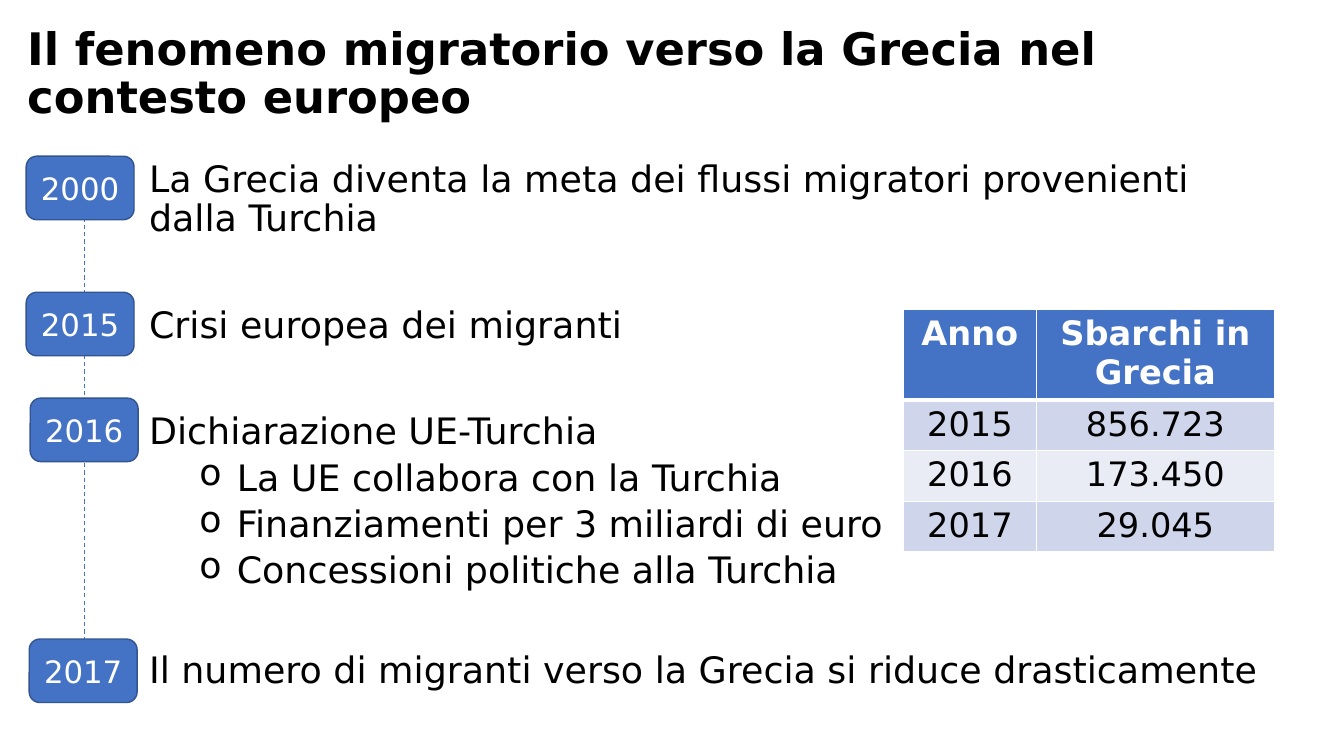
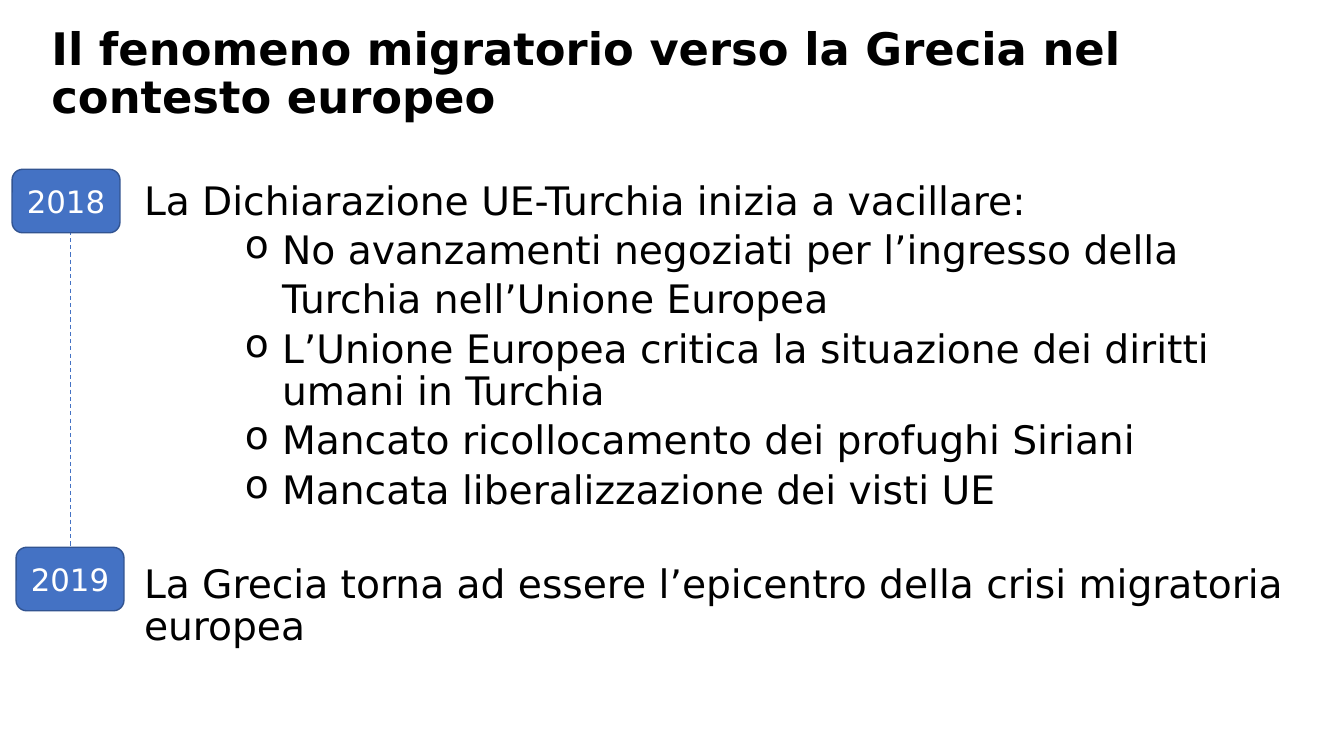
"""Build two timeline slides on migration towards Greece."""
from lxml import etree
from pptx import Presentation
from pptx.dml.color import RGBColor
from pptx.enum.dml import MSO_LINE
from pptx.enum.shapes import MSO_CONNECTOR, MSO_SHAPE
from pptx.enum.text import MSO_ANCHOR, MSO_AUTO_SIZE, PP_ALIGN
from pptx.oxml.ns import qn
from pptx.util import Inches, Pt

STRAIGHT = MSO_CONNECTOR.STRAIGHT
ROUNDED = MSO_SHAPE.ROUNDED_RECTANGLE
DASH = MSO_LINE.DASH
MIDDLE = MSO_ANCHOR.MIDDLE
NO_AUTOFIT = MSO_AUTO_SIZE.NONE
LEFT, CENTER = PP_ALIGN.LEFT, PP_ALIGN.CENTER

FONT = "DejaVu Sans"
TITLE = "Il fenomeno migratorio verso la Grecia nel contesto europeo"
COLORS = {
    "text": "000000",
    "white": "FFFFFF",
    "accent": "4472C4",
    "outline": "325491",
    "band_dark": "CFD5EA",
    "band_light": "E9EBF5",
}
BADGE_SIZE = (1.07, 0.63)
BULLET_HANG = 0.37
EVENT_GAP, ITEM_GAP = 10, 5


def color(name):
    """Return the named palette colour."""
    return RGBColor.from_string(COLORS[name])


def style(paragraph, size, color_name="text", bold=False, align=LEFT):
    """Set the font and alignment of a paragraph."""
    paragraph.alignment = align
    font = paragraph.font
    font.name, font.size, font.bold = FONT, Pt(size), bold
    font.color.rgb = color(color_name)


def add_titled_slide(prs, left, width):
    """Add a slide with the shared title."""
    slide = prs.slides.add_slide(prs.slide_layouts[5])
    title = slide.shapes.title
    title.left, title.top = Inches(left), Inches(0.43)
    title.width, title.height = Inches(width), Inches(0.63)
    frame = title.text_frame
    frame.text = TITLE
    frame.word_wrap = True
    frame.auto_size = NO_AUTOFIT
    frame.vertical_anchor = MIDDLE
    heading = frame.paragraphs[0]
    heading.line_spacing = 0.9
    style(heading, 32, bold=True)
    return slide


def add_timeline(slide, x, top, bottom, badges):
    """Add the dashed axis and its year badges."""
    axis = slide.shapes.add_connector(
        STRAIGHT, Inches(x), Inches(top), Inches(x), Inches(bottom))
    axis.line.color.rgb = color("accent")
    axis.line.width = Pt(0.75)
    axis.line.dash_style = DASH
    etree.SubElement(axis.line._get_or_add_ln().getparent(), qn("a:effectLst"))
    for year, left, badge_top in badges:
        add_badge(slide, year, left, badge_top)


def add_badge(slide, year, left, top):
    """Add a rounded year badge."""
    badge = slide.shapes.add_shape(
        ROUNDED, *map(Inches, (left, top, *BADGE_SIZE)))
    badge.shadow.inherit = False
    badge.fill.solid()
    badge.fill.fore_color.rgb = color("accent")
    badge.line.color.rgb = color("outline")
    badge.line.width = Pt(1)
    frame = badge.text_frame
    frame.text = year
    frame.vertical_anchor = MIDDLE
    style(frame.paragraphs[0], 22, "white", align=CENTER)


def indent(paragraph, margin, bulleted):
    """Indent a detail line, with a hanging bullet if wanted."""
    paragraph.level = 1
    properties = paragraph._p.get_or_add_pPr()
    properties.set("marL", str(Inches(margin)))
    properties.set("indent", str(-Inches(BULLET_HANG) if bulleted else 0))
    if bulleted:
        etree.SubElement(properties, qn("a:buChar"), char="o")


def add_events(slide, box, size, margin, lines):
    """Add the event texts from (kind, text, space before) lines."""
    frame = slide.shapes.add_textbox(*map(Inches, box)).text_frame
    frame.word_wrap = True
    for number, (kind, text, gap) in enumerate(lines):
        paragraph = frame.add_paragraph() if number else frame.paragraphs[0]
        paragraph.text = text
        if kind != "event":
            indent(paragraph, margin, kind == "item")
        paragraph.line_spacing = 0.9
        paragraph.space_before = Pt(gap)
        style(paragraph, size)


def set_borders(cell, widths):
    """Draw white cell borders, in points by side."""
    properties = cell._tc.get_or_add_tcPr()
    for position, (side, width) in enumerate(widths.items()):
        border = etree.Element(qn(f"a:ln{side}"), w=str(Pt(width)))
        fill = etree.SubElement(border, qn("a:solidFill"))
        etree.SubElement(fill, qn("a:srgbClr"), val=COLORS["white"])
        properties.insert(position, border)


def add_landings_table(slide, rows):
    """Add the table of landings by year."""
    widths = (1.32, 2.36)
    heights = [0.87] + [0.49] * (len(rows) - 1)
    table = slide.shapes.add_table(
        len(rows), len(widths), Inches(8.96), Inches(3.07),
        Inches(sum(widths)), Inches(sum(heights))).table
    for column, width in zip(table.columns, widths):
        column.width = Inches(width)
    for r, (values, height) in enumerate(zip(rows, heights)):
        table.rows[r].height = Inches(height)
        header = r == 0
        band = "accent" if header else "band_dark" if r % 2 else "band_light"
        for c, value in enumerate(values):
            cell = table.cell(r, c)
            cell.text = value
            cell.fill.solid()
            cell.fill.fore_color.rgb = color(band)
            set_borders(cell, {"L": 1, "R": 1, "T": 3 if r == 1 else 1,
                               "B": 3 if header else 1})
            style(cell.text_frame.paragraphs[0], 24,
                  "white" if header else "text", header, CENTER)


def build_crisis_slide(prs):
    """Build the slide for 2000 to 2017."""
    slide = add_titled_slide(prs, 0.17, 12.62)
    add_timeline(slide, 0.84, 1.73, 6.68, [
        ("2000", 0.26, 1.55), ("2015", 0.26, 2.9),
        ("2016", 0.3, 3.95), ("2017", 0.29, 6.34)])
    add_events(slide, (1.38, 1.55, 11.42, 5.52), 26, 0.87, [
        ("event", "La Grecia diventa la meta dei flussi migratori "
                  "provenienti dalla Turchia", EVENT_GAP),
        ("event", "Crisi europea dei migranti", 48),
        ("event", "Dichiarazione UE-Turchia", 48),
        ("item", "La UE collabora con la Turchia", ITEM_GAP),
        ("item", "Finanziamenti per 3 miliardi di euro", ITEM_GAP),
        ("item", "Concessioni politiche alla Turchia", ITEM_GAP),
        ("event", "Il numero di migranti verso la Grecia si riduce "
                  "drasticamente", 43)])
    add_landings_table(slide, [
        ("Anno", "Sbarchi in Grecia"), ("2015", "856.723"),
        ("2016", "173.450"), ("2017", "29.045")])


def build_aftermath_slide(prs):
    """Build the slide for 2018 and 2019."""
    slide = add_titled_slide(prs, 0.41, 12.59)
    add_timeline(slide, 0.7, 1.86, 5.57, [
        ("2018", 0.12, 1.68), ("2019", 0.16, 5.43)])
    add_events(slide, (1.33, 1.75, 11.75, 5), 28, 1.37, [
        ("event", "La Dichiarazione UE-Turchia inizia a vacillare:", EVENT_GAP),
        ("item", "No avanzamenti negoziati per l’ingresso della", ITEM_GAP),
        ("continuation", "Turchia nell’Unione Europea", ITEM_GAP),
        ("item", "L’Unione Europea critica la situazione dei diritti umani "
                 "in Turchia", ITEM_GAP),
        ("item", "Mancato ricollocamento dei profughi Siriani", ITEM_GAP),
        ("item", "Mancata liberalizzazione dei visti UE", ITEM_GAP),
        ("event", "La Grecia torna ad essere l’epicentro della crisi "
                  "migratoria europea", 37)])


def main():
    """Build and save the presentation."""
    prs = Presentation()
    prs.slide_width, prs.slide_height = Inches(13.33), Inches(7.5)
    build_crisis_slide(prs)
    build_aftermath_slide(prs)
    prs.save("out.pptx")


if __name__ == "__main__":
    main()
